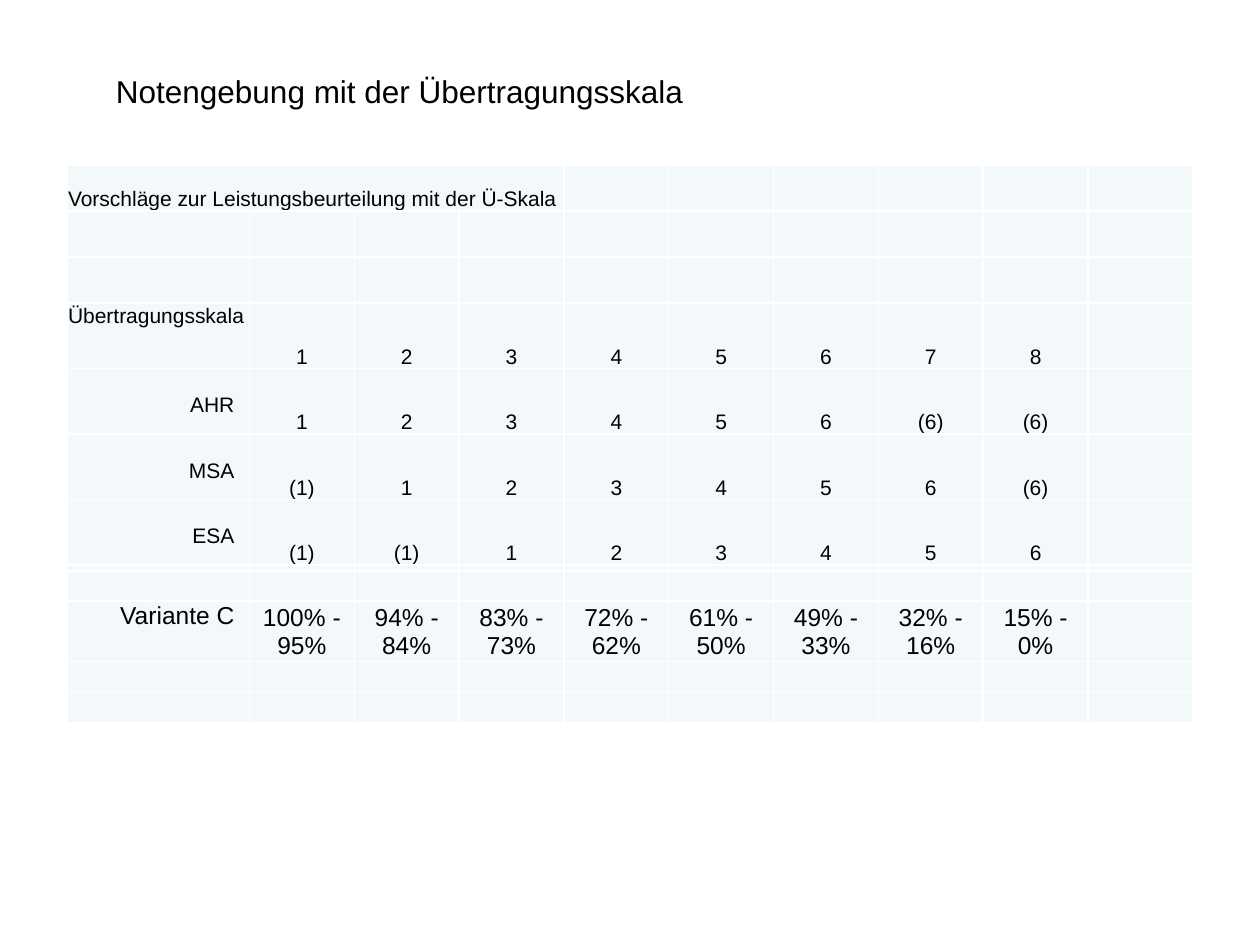
from lxml.etree import SubElement
from pptx import Presentation
from pptx.dml.color import RGBColor
from pptx.enum.text import MSO_ANCHOR as Anchor, MSO_AUTO_SIZE as AutoSize, PP_ALIGN as Align
from pptx.oxml.ns import qn
from pptx.util import Inches, Pt

COLORS = {"text": "000000", "cell": "F3F9FA", "line": "FFFFFF"}
LEVELS = range(1, 9)
COLUMNS = [14.5] + [8.32] * 9
RANGES = ["100% - 95%", "94% - 84%", "83% - 73%", "72% - 62%",
          "61% - 50%", "49% - 33%", "32% - 16%", "15% - 0%"]


class Sheet:
    """Style and current slide; lengths are cells of a 100 x 75 grid."""

    font = "Arial"

    def __init__(self, deck):
        self.page = deck.slides.add_slide(deck.slide_layouts[5])
        self.unit = deck.slide_width / 100

    def grid(self, count):
        return round(count * self.unit)

    def add_text(self, frame, text, size, align=Align.LEFT):
        para = frame.paragraphs[0]
        para.alignment = align
        span = para.add_run()
        span.text = text
        span.font.name = self.font
        span.font.size = Pt(size)
        span.font.color.rgb = RGBColor.from_string(COLORS["text"])

    def title(self, text, left, top, width, height):
        box = self.page.shapes.title
        box.left, box.top, box.width, box.height = map(self.grid, (left, top, width, height))
        frame = box.text_frame
        frame.word_wrap = True
        frame.auto_size = AutoSize.SHAPE_TO_FIT_TEXT
        frame.vertical_anchor = Anchor.TOP
        frame.margin_left = Inches(0.17)
        self.add_text(frame, text, 18)

    def table(self, left, top, columns, rows):
        frame = self.page.shapes.add_table(
            len(rows), len(columns), self.grid(left), self.grid(top),
            self.grid(sum(columns)), self.grid(sum(rows)))
        table = frame.table
        table.first_row = table.horz_banding = False
        for column, width in zip(table.columns, columns):
            column.width = self.grid(width)
        for row, height in zip(table.rows, rows):
            row.height = self.grid(height)
        for cell in table.iter_cells():
            self.blank(cell)
        return table

    def blank(self, cell):
        """Give a cell its borders, fill, tight margins and a small empty line."""
        properties = cell._tc.get_or_add_tcPr()
        for side in ("a:lnL", "a:lnR", "a:lnT", "a:lnB"):
            line = SubElement(properties, qn(side), w=str(Pt(1)))
            fill = SubElement(line, qn("a:solidFill"))
            SubElement(fill, qn("a:srgbClr"), val=COLORS["line"])
        cell.fill.solid()
        cell.fill.fore_color.rgb = RGBColor.from_string(COLORS["cell"])
        cell.margin_left = cell.margin_right = cell.margin_top = Inches(0.01)
        cell.margin_bottom = 0
        SubElement(cell.text_frame.paragraphs[0]._p, qn("a:endParaRPr"), sz="1200")

    def label(self, cell, text, size=12, top=0.01):
        cell.margin_right = Inches(0.12)
        cell.margin_top = Inches(top)
        self.add_text(cell.text_frame, text, size, Align.RIGHT)

    def values(self, table, row, texts, size=12, anchor=Anchor.BOTTOM):
        for column, text in enumerate(texts, start=1):
            cell = table.cell(row, column)
            cell.vertical_anchor = anchor
            self.add_text(cell.text_frame, text, size, Align.CENTER)


def grade(level, shift):
    """Shift a level to a grade; levels beyond 1 to 6 show the limit in brackets."""
    mark = level - shift
    return str(mark) if 1 <= mark <= 6 else f"({min(max(mark, 1), 6)})"


def main():
    deck = Presentation()
    deck.slide_width, deck.slide_height = Inches(10), Inches(7.5)
    sheet = Sheet(deck)
    sheet.title("Notengebung mit der Übertragungsskala", 7.5, 5.2, 85, 4)

    scale = sheet.table(5.3, 13.1, COLUMNS, [3.65] * 3 + [5.2] * 4 + [3.7])
    heading = scale.cell(0, 0)
    heading.merge(scale.cell(0, 3))
    heading.vertical_anchor = Anchor.BOTTOM
    sheet.add_text(heading.text_frame, "Vorschläge zur Leistungsbeurteilung mit der Ü-Skala", 12)
    sheet.add_text(scale.cell(3, 0).text_frame, "Übertragungsskala", 12)
    sheet.values(scale, 3, map(str, LEVELS))
    for shift, degree in enumerate(["AHR", "MSA", "ESA"]):
        row = 4 + shift
        sheet.label(scale.cell(row, 0), degree, top=0.2)
        sheet.values(scale, row, [grade(level, shift) for level in LEVELS])

    variant = sheet.table(5.3, 45.3, COLUMNS, [2.4, 4.8, 2.45, 2.4])
    sheet.label(variant.cell(1, 0), "Variante C", size=14)
    sheet.values(variant, 1, RANGES, size=14, anchor=Anchor.MIDDLE)

    deck.save("out.pptx")


if __name__ == "__main__":
    main()
